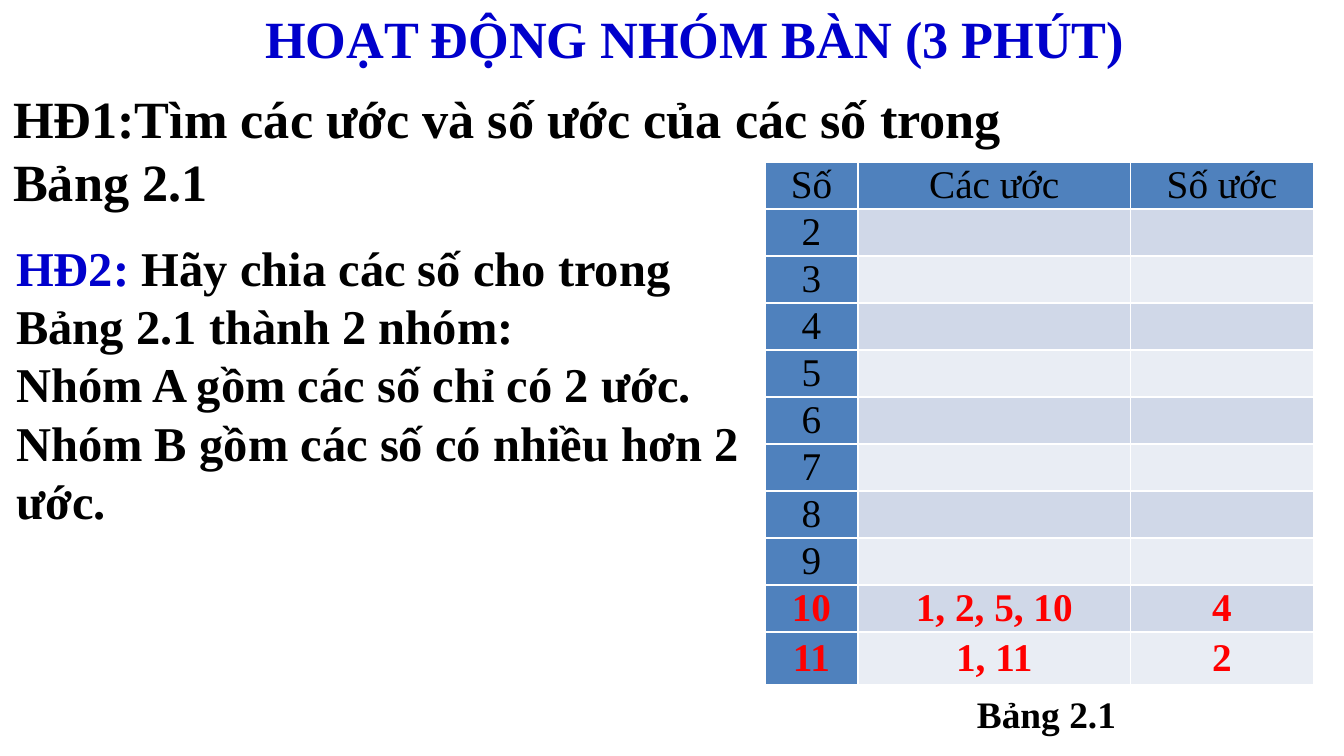
from dataclasses import dataclass

from lxml import etree
from pptx import Presentation
from pptx.dml.color import RGBColor
from pptx.enum.text import MSO_ANCHOR, MSO_AUTO_SIZE, PP_ALIGN
from pptx.oxml.ns import qn
from pptx.util import Emu, Inches, Pt

CENTER, LEFT = PP_ALIGN.CENTER, PP_ALIGN.LEFT
TOP, MIDDLE = MSO_ANCHOR.TOP, MSO_ANCHOR.MIDDLE
NO_AUTOFIT = MSO_AUTO_SIZE.NONE
TITLE_AND_CONTENT = 1
SLIDE_WIDTH = Inches(10)
SLIDE_HEIGHT = Emu(SLIDE_WIDTH * 9 // 16)


@dataclass(frozen=True)
class Theme:
    font: str = "Times New Roman"
    text: str = "000000"
    accent: str = "0000CC"
    answer: str = "FF0000"
    header: str = "4F81BD"
    bands: tuple[str, str] = ("D0D8E8", "E9EDF4")
    border: str = "FFFFFF"
    border_width: float = 1
    heading_size: float = 28
    body_size: float = 26
    table_size: float = 21
    caption_size: float = 20


@dataclass(frozen=True)
class Area:
    """A rectangle in percent of the slide's width and height."""
    left: float
    top: float
    width: float
    height: float

    def lengths(self) -> tuple[Emu, Emu, Emu, Emu]:
        across, down = SLIDE_WIDTH / 100, SLIDE_HEIGHT / 100
        return (Emu(round(self.left * across)), Emu(round(self.top * down)),
                Emu(round(self.width * across)), Emu(round(self.height * down)))


@dataclass(frozen=True)
class Run:
    text: str
    color: str = Theme.text


@dataclass(frozen=True)
class NumberRow:
    number: str
    divisors: str = ""
    count: str = ""

    def values(self) -> tuple[str, str, str]:
        return self.number, self.divisors, self.count


THEME = Theme()
TITLE_AREA = Area(13.33, 0, 76.7, 10.17)
FIRST_TASK_AREA = Area(0, 10.5, 84.2, 18.5)
SECOND_TASK_AREA = Area(0.2, 30.6, 56.7, 40.7)
TABLE_AREA = Area(56.93, 21.4, 40.8, 69.2)
CAPTION_AREA = Area(71.7, 90.5, 20, 7.8)

COLUMN_WIDTHS = (0.69, 2.03, 1.36)
ROW_HEIGHT, LAST_ROW_HEIGHT = 0.35, 0.39
HEADER = NumberRow("Số", "Các ước", "Số ước")
NUMBER_ROWS = [NumberRow(str(number)) for number in range(2, 10)] + [
    NumberRow("10", "1, 2, 5, 10", "4"),
    NumberRow("11", "1, 11", "2"),
]
SECOND_TASK = [
    [Run("HĐ2: ", THEME.accent), Run("Hãy chia các số cho trong Bảng 2.1 thành 2 nhóm:")],
    [Run("Nhóm A gồm các số chỉ có 2 ước.")],
    [Run("Nhóm B gồm các số có nhiều hơn 2 ước.")],
]


def style_font(font, size: float, color: str, bold: bool) -> None:
    font.name, font.size, font.bold = THEME.font, Pt(size), bold
    font.color.rgb = RGBColor.from_string(color)


def write_text(shape, area: Area, paragraphs: list[list[Run]], size: float,
               alignment=LEFT) -> None:
    shape.left, shape.top, shape.width, shape.height = area.lengths()
    frame = shape.text_frame
    frame.word_wrap, frame.auto_size, frame.vertical_anchor = True, NO_AUTOFIT, TOP
    for index, runs in enumerate(paragraphs):
        paragraph = frame.paragraphs[0] if index == 0 else frame.add_paragraph()
        paragraph.alignment = alignment
        paragraph.space_before = Pt(0)
        properties = paragraph._p.get_or_add_pPr()
        properties.set("marL", "0")
        properties.set("indent", "0")
        etree.SubElement(properties, qn("a:buNone"))
        style_font(paragraph.font, size, runs[0].color, True)
        for item in runs:
            run = paragraph.add_run()
            run.text = item.text
            if item.color != runs[0].color:
                run.font.color.rgb = RGBColor.from_string(item.color)


def add_borders(cell) -> None:
    properties = cell._tc.get_or_add_tcPr()
    for side in "LRTB":
        line = etree.SubElement(properties, qn(f"a:ln{side}"), w=str(Pt(THEME.border_width)))
        fill = etree.SubElement(line, qn("a:solidFill"))
        etree.SubElement(fill, qn("a:srgbClr"), val=THEME.border)


def fill_cell(cell, text: str, fill: str, is_answer: bool) -> None:
    add_borders(cell)
    cell.fill.solid()
    cell.fill.fore_color.rgb = RGBColor.from_string(fill)
    cell.margin_left = cell.margin_right = Inches(0.04)
    cell.margin_top = cell.margin_bottom = 0
    cell.vertical_anchor = MIDDLE
    cell.text = text
    paragraph = cell.text_frame.paragraphs[0]
    paragraph.alignment = CENTER
    style_font(paragraph.font, THEME.table_size,
               THEME.answer if is_answer else THEME.text, is_answer)


def add_divisor_table(slide) -> None:
    rows = [HEADER, *NUMBER_ROWS]
    table = slide.shapes.add_table(len(rows), len(COLUMN_WIDTHS), *TABLE_AREA.lengths()).table
    table.first_row = table.horz_banding = False
    for column, width in zip(table.columns, COLUMN_WIDTHS):
        column.width = Inches(width)
    for row_index, row in enumerate(rows):
        is_last = row_index == len(rows) - 1
        table.rows[row_index].height = Inches(LAST_ROW_HEIGHT if is_last else ROW_HEIGHT)
        is_header = row is HEADER
        is_answer = not is_header and bool(row.divisors)
        for column_index, text in enumerate(row.values()):
            in_header = is_header or column_index == 0
            fill = THEME.header if in_header else THEME.bands[(row_index - 1) % 2]
            fill_cell(table.cell(row_index, column_index), text, fill, is_answer)


def add_label(slide, area: Area, text: str, size: float) -> None:
    write_text(slide.shapes.add_textbox(*area.lengths()), area, [[Run(text)]], size)


def main() -> None:
    presentation = Presentation()
    presentation.slide_width, presentation.slide_height = SLIDE_WIDTH, SLIDE_HEIGHT
    slide = presentation.slides.add_slide(presentation.slide_layouts[TITLE_AND_CONTENT])
    write_text(slide.shapes.title, TITLE_AREA,
               [[Run("HOẠT ĐỘNG NHÓM BÀN (3 PHÚT)", THEME.accent)]],
               THEME.heading_size, CENTER)
    add_label(slide, FIRST_TASK_AREA, "HĐ1:Tìm các ước và số ước của các số trong Bảng 2.1",
              THEME.heading_size)
    add_divisor_table(slide)
    write_text(slide.placeholders[1], SECOND_TASK_AREA, SECOND_TASK, THEME.body_size)
    add_label(slide, CAPTION_AREA, "Bảng 2.1", THEME.caption_size)
    presentation.save("out.pptx")


if __name__ == "__main__":
    main()
